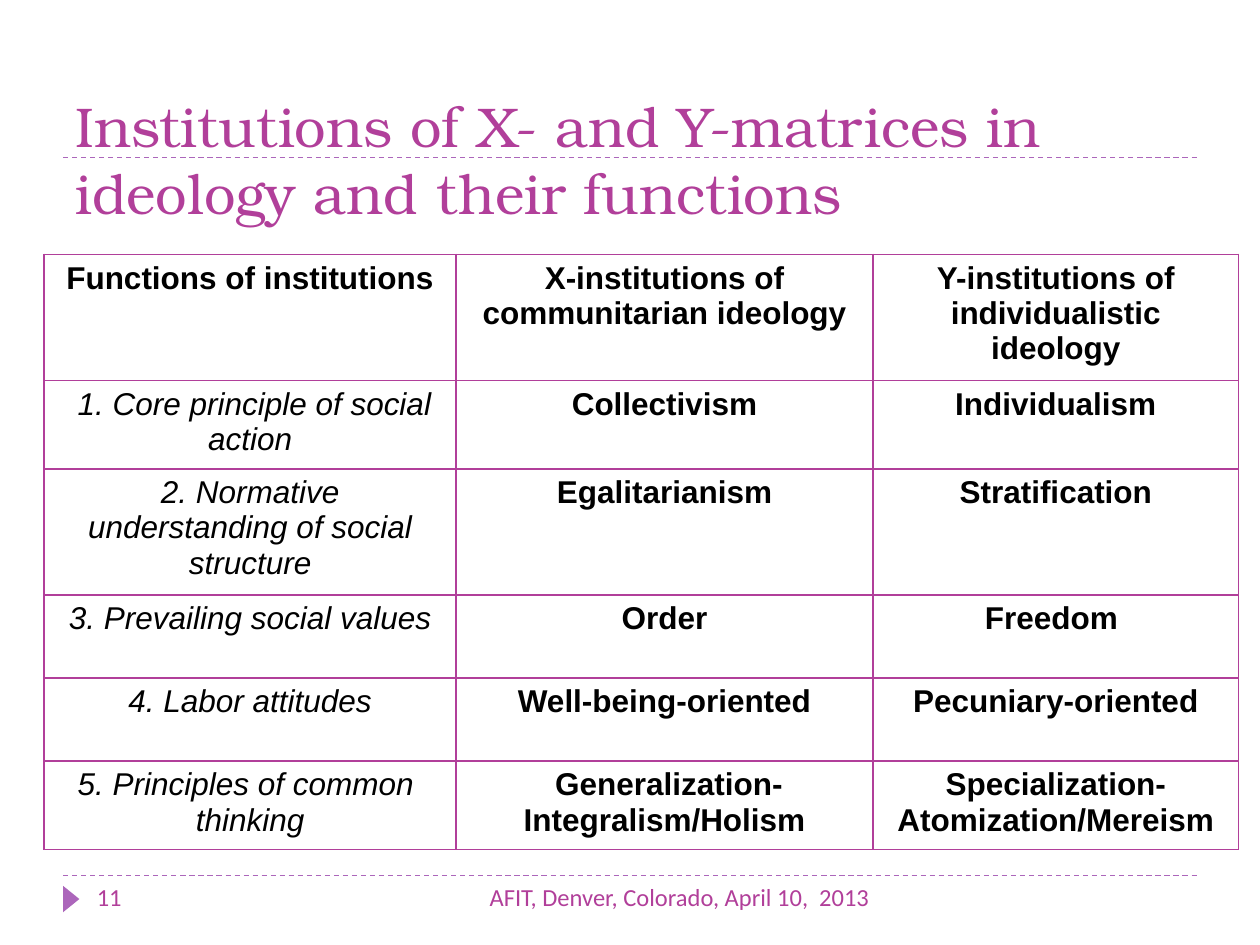
from pptx import Presentation, util as u
from pptx.dml.color import RGBColor
from pptx.enum import dml, shapes, text
from pptx.oxml.ns import qn
from lxml import etree

PLUM = RGBColor(0xB1, 0x3F, 0x9A)
LILAC = RGBColor(0xAC, 0x66, 0xBB)
BLACK = RGBColor(0, 0, 0)
WIDE, HIGH = u.Inches(10), u.Inches(7.5)
COLS = (32.7, 33.1, 29)
ROWS = (12.53, 8.8, 12.53, 8.8, 8.8, 8.8)
CELLS = (
    ("Functions of institutions", "X-institutions of communitarian ideology",
     "Y-institutions of individualistic ideology"),
    (" 1. Core principle of social action", "Collectivism", "Individualism"),
    ("2. Normative understanding of social structure", "Egalitarianism", "Stratification"),
    ("3. Prevailing social values", "Order", "Freedom "),
    ("4. Labor attitudes", "Well-being-oriented", "Pecuniary-oriented"),
    ("5. Principles of common  thinking", " Generalization-Integralism/Holism",
     "Specialization-Atomization/Mereism"),
)


def across(share):
    """Turn a percentage of the slide width into a length."""
    return int(WIDE * share / 100)


def down(share):
    """Turn a percentage of the slide height into a length."""
    return int(HIGH * share / 100)


def area(x, y, w, h):
    """Turn percentages of the slide into a box."""
    return across(x), down(y), across(w), down(h)


def add_run(para, words, font, size, color, bold=False, italic=False):
    """Add one styled run to a paragraph."""
    run = para.add_run()
    run.text = words
    face = run.font
    face.name, face.size, face.bold, face.italic = font, u.Pt(size), bold, italic
    face.color.rgb = color


def add_label(slide, box, words, font, size, align=text.PP_ALIGN.LEFT,
              anchor=text.MSO_ANCHOR.TOP):
    """Place a wrapped plum line of text in a box."""
    frame = slide.shapes.add_textbox(*box).text_frame
    frame.word_wrap = True
    frame.vertical_anchor = anchor
    para = frame.paragraphs[0]
    para.alignment = align
    add_run(para, words, font, size, PLUM)


def add_rule(slide, box):
    """Draw a dashed rule along the top of a box."""
    x, y, w, _ = box
    rule = slide.shapes.add_connector(shapes.MSO_CONNECTOR.STRAIGHT, x, y, x + w, y)
    rule.line.color.rgb = LILAC
    rule.line.width = u.Pt(0.75)
    rule.line.dash_style = dml.MSO_LINE.DASH
    etree.SubElement(rule._element.spPr, qn("a:effectLst"))


def add_title(slide, box):
    """Place the heading at the foot of its box."""
    add_label(slide, box, "Institutions of X- and Y-matrices in ideology and their functions",
              "TeX Gyre Bonum", 32, anchor=text.MSO_ANCHOR.BOTTOM)


def add_edges(cell):
    """Give a cell plum borders on all sides."""
    props = cell._tc.get_or_add_tcPr()
    for place, side in enumerate("LRTB"):
        edge = etree.Element(qn("a:ln" + side), w=str(u.Pt(1)))
        fill = etree.SubElement(edge, qn("a:solidFill"))
        etree.SubElement(fill, qn("a:srgbClr"), val=str(PLUM))
        props.insert(place, edge)


def add_matrix(slide, box):
    """Build the table of institutions and functions."""
    table = slide.shapes.add_table(len(ROWS), len(COLS), *box).table
    table.first_row = table.horz_banding = False
    for col, share in zip(table.columns, COLS):
        col.width = across(share)
    for row, share in zip(table.rows, ROWS):
        row.height = down(share)
    for r, line in enumerate(CELLS):
        for c, words in enumerate(line):
            cell = table.cell(r, c)
            cell.fill.background()
            add_edges(cell)
            para = cell.text_frame.paragraphs[0]
            para.alignment = text.PP_ALIGN.CENTER
            item = r > 0 and c == 0
            add_run(para, words, "Arial", 18, BLACK, not item, item)


def add_footer(slide, box):
    """Place the marker, page number and event in the footer band."""
    x, y, w, h = box
    mark = slide.shapes.add_shape(shapes.MSO_SHAPE.ISOSCELES_TRIANGLE,
                                  *area(4.6, 94.27, 2.1, 1.73))
    mark.rotation = 90
    mark.shadow.inherit = False
    mark.fill.solid()
    mark.fill.fore_color.rgb = LILAC
    mark.line.fill.background()
    add_label(slide, (x + across(26.7), y, across(38.3), h),
              "AFIT, Denver, Colorado, April 10,  2013", "Calibri", 14, text.PP_ALIGN.RIGHT)
    add_label(slide, (x + across(1.7), y, across(21.7), h), "11", "Calibri", 14)


def main():
    """Build and save the slide."""
    deck = Presentation()
    deck.slide_width, deck.slide_height = WIDE, HIGH
    slide = deck.slides.add_slide(deck.slide_layouts[6])
    foot = area(5, 92.67, 90, 5.33)
    add_rule(slide, foot)
    add_rule(slide, area(5, 16.67, 90, 0))
    add_title(slide, area(5, 3.6, 91.7, 20.93))
    add_footer(slide, foot)
    add_matrix(slide, area(3.5, 26.93, sum(COLS), sum(ROWS)))
    deck.save("out.pptx")


if __name__ == "__main__":
    main()
